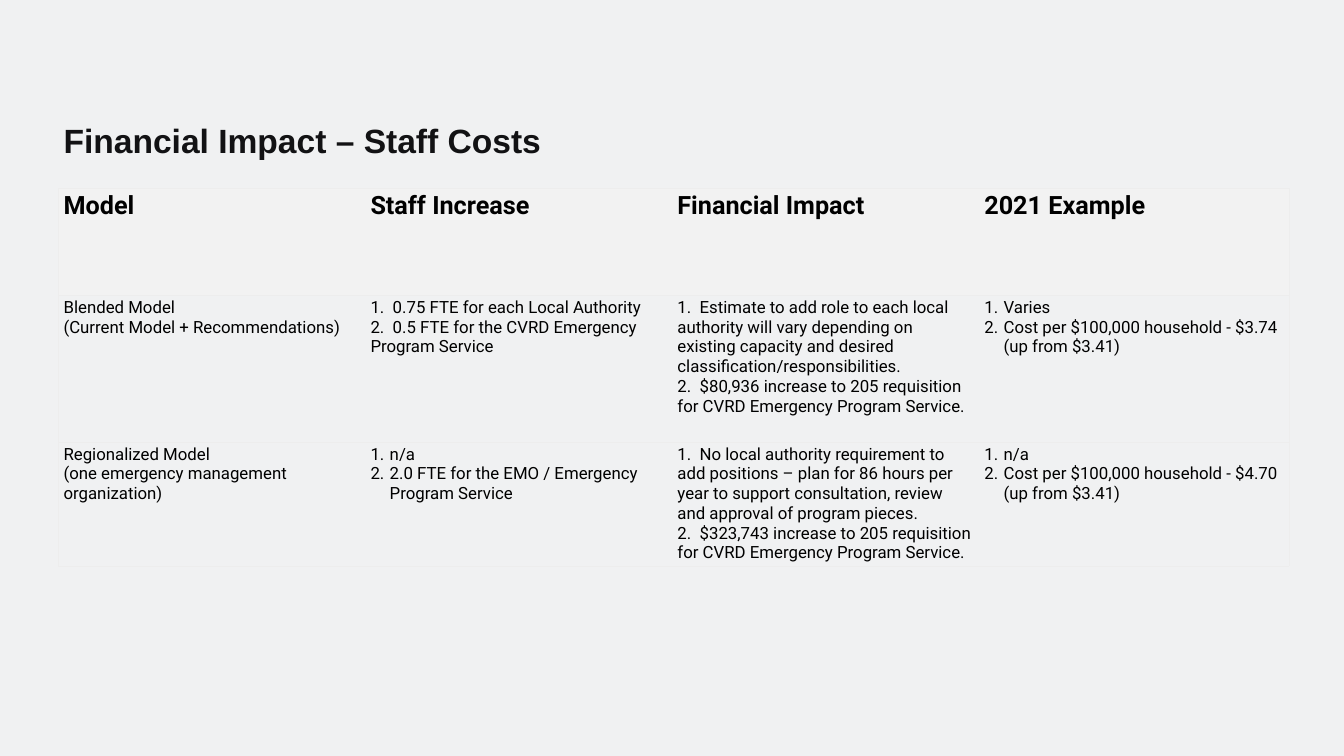
from lxml import etree
from pptx import Presentation
from pptx.dml.color import RGBColor
from pptx.enum.text import MSO_ANCHOR, PP_ALIGN
from pptx.oxml.ns import qn
from pptx.util import Cm, Pt

LEFT = PP_ALIGN.LEFT
TOP = MSO_ANCHOR.TOP
TITLE_ONLY = 5

COLORS = {
    "background": "F0F1F2",
    "title": "121214",
    "text": "000000",
    "header": "F2F2F2",
    "border": "EDEDED",
}
FORMATS = {
    "title": {"name": "Arial", "size": Pt(48), "bold": True},
    "header": {"name": "Roboto", "size": Pt(36), "bold": True},
    "body": {"name": "Roboto", "size": Pt(24), "bold": False},
}

# Cell content: (list style, paragraphs)
PLAIN, HANGING, TABBED = "plain", "hanging", "tabbed"
HEADERS = ["Model", "Staff Increase", "Financial Impact", "2021 Example"]
ROWS = [
    [
        (PLAIN, ["Blended Model", "(Current Model + Recommendations)"]),
        (TABBED, ["0.75 FTE for each Local Authority",
                  "0.5 FTE for the CVRD Emergency Program Service"]),
        (TABBED, ["Estimate to add role to each local authority will vary depending on "
                  "existing capacity and desired classification/responsibilities.",
                  "$80,936 increase to 205 requisition for CVRD Emergency Program Service."]),
        (HANGING, ["Varies", "Cost per $100,000 household - $3.74 (up from $3.41)"]),
    ],
    [
        (PLAIN, ["Regionalized Model", "(one emergency management organization)"]),
        (HANGING, ["n/a", "2.0 FTE for the EMO / Emergency Program Service"]),
        (TABBED, ["No local authority requirement to add positions – plan for 86 hours per "
                  "year to support consultation, review and approval of program pieces.",
                  "$323,743 increase to 205 requisition for CVRD Emergency Program Service."]),
        (HANGING, ["n/a", "Cost per $100,000 household - $4.70 (up from $3.41)"]),
    ],
]
COLUMN_WIDTHS = [15.47, 15.47, 15.47, 15.62]
ROW_HEIGHTS = [5.38, 7.39, 6.25]


class SlideBuilder:
    """Holds the style and the current slide."""

    def __init__(self, deck):
        self.slide = deck.slides.add_slide(deck.slide_layouts[TITLE_ONLY])
        fill = self.slide.background.fill
        fill.solid()
        fill.fore_color.rgb = RGBColor.from_string(COLORS["background"])

    def span(self, para, text, style, color):
        span = para.add_run()
        span.text = text
        for name, value in FORMATS[style].items():
            setattr(span.font, name, value)
        span.font.color.rgb = RGBColor.from_string(COLORS[color])

    def title(self, text, left, top, width, height):
        box = self.slide.shapes.title
        box.left, box.top, box.width, box.height = map(Cm, (left, top, width, height))
        frame = box.text_frame
        frame.vertical_anchor = TOP
        frame.margin_top = Cm(0.2)
        frame.paragraphs[0].alignment = LEFT
        self.span(frame.paragraphs[0], text, "title", "title")

    def number(self, para, list_style):
        properties = para._p.get_or_add_pPr()
        if list_style == HANGING:
            properties.set("marL", str(Cm(0.97)))
            properties.set("indent", str(-Cm(0.97)))
            etree.SubElement(properties, qn("a:buFont"), typeface="+mj-lt")
            etree.SubElement(properties, qn("a:buAutoNum"), type="arabicPeriod")
        elif list_style == TABBED:
            tabs = etree.SubElement(properties, qn("a:tabLst"))
            etree.SubElement(tabs, qn("a:tab"), pos=str(Cm(1.12)), algn="l")

    def borders(self, cell, visible):
        properties = cell._tc.get_or_add_tcPr()
        for index, side in enumerate(("L", "R", "T", "B")):
            line = etree.Element(qn(f"a:ln{side}"), w=str(Pt(0.75)))
            if side in visible:
                fill = etree.SubElement(line, qn("a:solidFill"))
                etree.SubElement(fill, qn("a:srgbClr"), val=COLORS["border"])
            else:
                etree.SubElement(line, qn("a:noFill"))
            properties.insert(index, line)

    def cell(self, cell, list_style, texts, style):
        cell.vertical_anchor = TOP
        if style == "header":
            cell.fill.solid()
            cell.fill.fore_color.rgb = RGBColor.from_string(COLORS["header"])
        else:
            cell.fill.background()
        frame = cell.text_frame
        for index, text in enumerate(texts):
            para = frame.add_paragraph() if index else frame.paragraphs[0]
            para.alignment = LEFT
            self.number(para, list_style)
            if list_style == TABBED:
                text = f"{index + 1}.\t{text}"
            self.span(para, text, style, "text")

    def table(self, rows, left, top):
        size = map(Cm, (left, top, sum(COLUMN_WIDTHS), sum(ROW_HEIGHTS)))
        table = self.slide.shapes.add_table(len(rows), len(COLUMN_WIDTHS), *size).table
        for column, width in zip(table.columns, COLUMN_WIDTHS):
            column.width = Cm(width)
        for row, height in zip(table.rows, ROW_HEIGHTS):
            row.height = Cm(height)
        last = len(COLUMN_WIDTHS) - 1
        for r, row in enumerate(rows):
            for c, (list_style, texts) in enumerate(row):
                cell = table.cell(r, c)
                self.cell(cell, list_style, texts, "body" if r else "header")
                self.borders(cell, "TB" + "L" * (c == 0) + "R" * (c == last))


def main():
    deck = Presentation()
    deck.slide_width, deck.slide_height = Cm(67.74), Cm(38.1)
    builder = SlideBuilder(deck)

    # Title
    builder.title("Financial Impact – Staff Costs", 2.95, 5.82, 43.13, 3.25)

    # Staff cost comparison
    header_row = [(PLAIN, [text]) for text in HEADERS]
    builder.table([header_row] + ROWS, 2.95, 9.5)

    deck.save("out.pptx")


if __name__ == "__main__":
    main()
